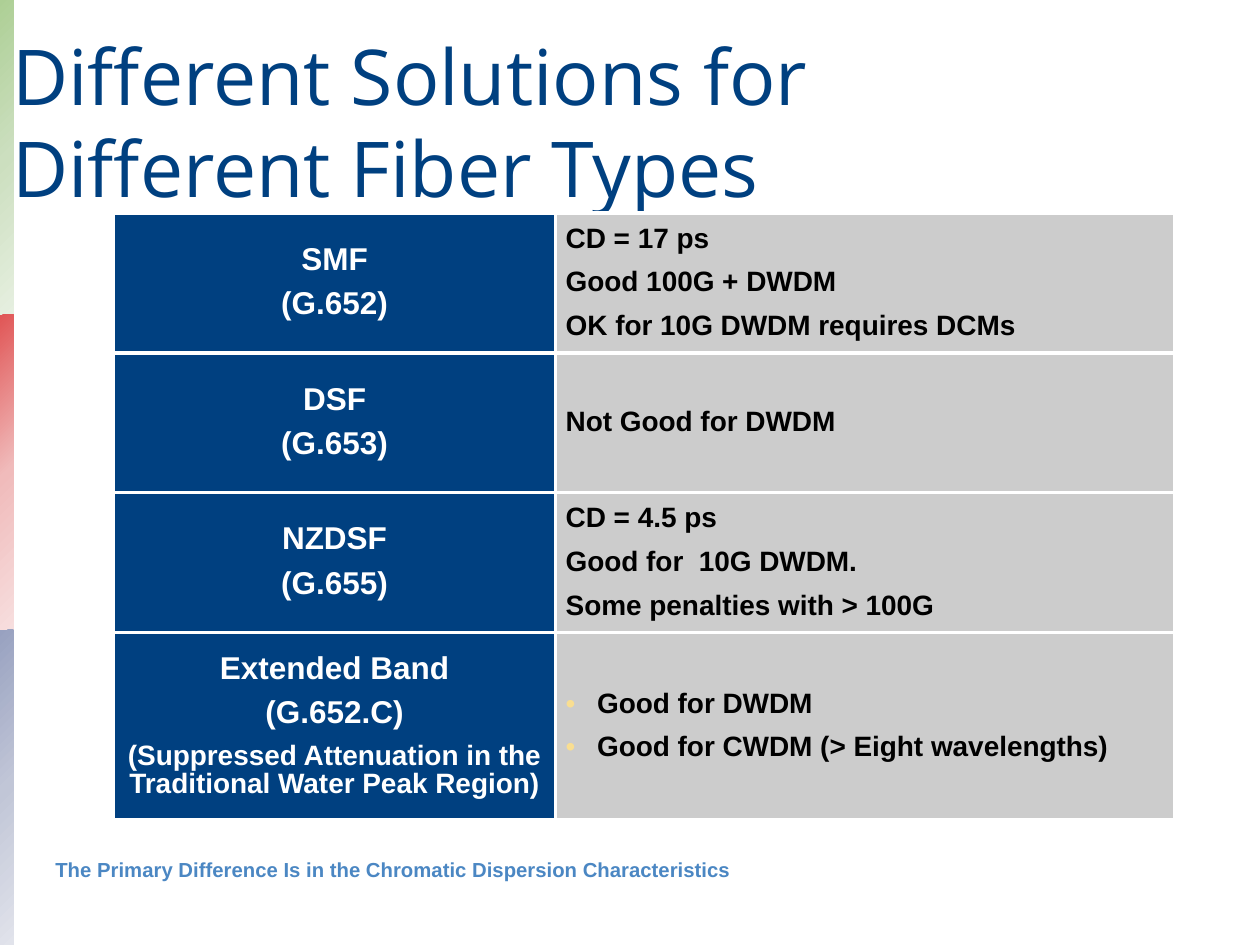
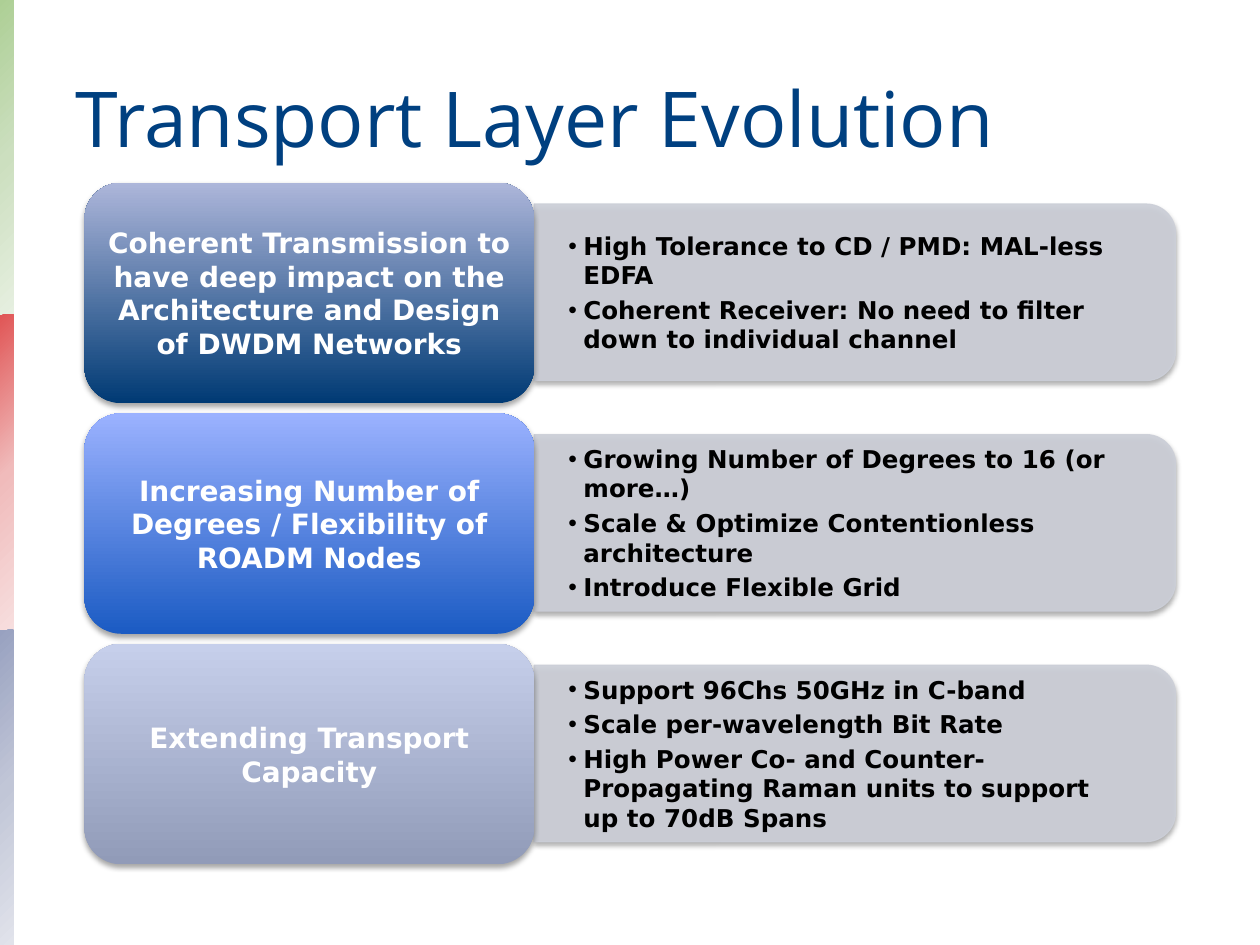
from lxml import etree
from pptx import Presentation
from pptx.dml.color import RGBColor
from pptx.enum import shapes, text
from pptx.oxml import ns
from pptx.util import Inches, Pt

NAVY, WHITE, BLACK = "004080", "FFFFFF", "000000"
CELL_GREY, PANEL_GREY = "CCCCCC", "CCCFD8"
FOOTNOTE_BLUE, BULLET_GOLD = "4B87C3", "F9DE91"
BODY_FONT, TITLE_FONT, PANEL_FONT = "Arial", "Open Sans", "DejaVu Sans"

BANDS = [
    ("ADCF95", "CCDFBF", "E6EFE0"),
    ("E05555", "F0BBBB", "F7DEDE"),
    ("98A1C0", "C1C6D7", "E1E3EB"),
]

FIBERS = [
    (["SMF", "(G.652)"],
     ["CD = 17 ps", "Good 100G + DWDM", "OK for 10G DWDM requires DCMs"]),
    (["DSF", "(G.653)"], ["Not Good for DWDM"]),
    (["NZDSF", "(G.655)"],
     ["CD = 4.5 ps", "Good for  10G DWDM.", "Some penalties with > 100G"]),
    (["Extended Band", "(G.652.C)",
      "(Suppressed Attenuation in the Traditional Water Peak Region)"],
     ["Good for DWDM", "Good for CWDM (> Eight wavelengths)"]),
]

THEMES = [
    ("Coherent Transmission to have deep impact on the Architecture and "
     "Design of DWDM Networks", ("003A74", "ADB6DA"),
     ["High Tolerance to CD / PMD: MAL-less EDFA",
      "Coherent Receiver: No need to filter down to individual channel"]),
    ("Increasing Number of Degrees / Flexibility of ROADM Nodes",
     ("1B5BC3", "9BB2FF"),
     ["Growing Number of Degrees to 16 (or more…)",
      "Scale & Optimize Contentionless architecture",
      "Introduce Flexible Grid"]),
    ("Extending Transport Capacity", ("919BB8", "C6CFEB"),
     ["Support 96Chs 50GHz in C-band",
      "Scale per-wavelength Bit Rate",
      "High Power Co- and Counter-Propagating Raman units to support "
      "up to 70dB Spans"]),
]


def rgb(color):
    return RGBColor.from_string(color)


def add_node(parent, tag, **attributes):
    node = etree.SubElement(parent, ns.qn(tag))
    for name, value in attributes.items():
        node.set(name, str(value))
    return node


def inches(*lengths):
    return [Inches(length) for length in lengths]


def set_margins(target, side, top):
    target.margin_left = target.margin_right = Inches(side)
    target.margin_top = target.margin_bottom = Inches(top)


def style(para, font, size, color, bold=True):
    for span in para.runs:
        span.font.name = font
        span.font.size = Pt(size)
        span.font.bold = bold
        span.font.color.rgb = rgb(color)


def add_bullet(para, indent, color=None):
    props = para._p.get_or_add_pPr()
    props.set("marL", str(Inches(indent)))
    props.set("indent", str(-Inches(indent)))
    if color:
        add_node(add_node(props, "a:buClr"), "a:srgbClr", val=color)
    add_node(props, "a:buFont", typeface="Arial")
    add_node(props, "a:buChar", char="•")


def fill_gradient(shape, colors, angle):
    shape.fill.background()
    blank = shape._element.spPr.find(ns.qn("a:noFill"))
    gradient = etree.Element(ns.qn("a:gradFill"), rotWithShape="1")
    stops = add_node(gradient, "a:gsLst")
    for index, color in enumerate(colors):
        stop = add_node(stops, "a:gs", pos=index * 100000 // (len(colors) - 1))
        add_node(stop, "a:srgbClr", val=color)
    add_node(gradient, "a:lin", ang=angle * 60000, scaled=0)
    blank.getparent().replace(blank, gradient)


def add_plain_shape(slide, kind, *place):
    shape = slide.shapes.add_shape(kind, *inches(*place))
    shape.shadow.inherit = False
    shape.line.fill.background()
    return shape


def add_drop_shadow(shape):
    effects = shape._element.spPr.find(ns.qn("a:effectLst"))
    shadow = add_node(effects, "a:outerShdw", blurRad=Pt(3.1), dist=Pt(1.8),
                      dir=90 * 60000, rotWithShape=0)
    add_node(add_node(shadow, "a:srgbClr", val=BLACK), "a:alpha", val=35000)


def add_text_box(slide, *place):
    box = slide.shapes.add_textbox(*inches(*place))
    box.text_frame.word_wrap = True
    box.text_frame.vertical_anchor = text.MSO_ANCHOR.MIDDLE
    return box


def add_title(slide, wording, *place):
    box = add_text_box(slide, *place)
    set_margins(box.text_frame, 0.1, 0.05)
    box.text_frame.text = wording
    style(box.text_frame.paragraphs[0], TITLE_FONT, 44, NAVY, bold=False)


def add_slide(deck):
    slide = deck.slides.add_slide(deck.slide_layouts[6])
    for index, colors in enumerate(BANDS):
        band = add_plain_shape(slide, shapes.MSO_SHAPE.RECTANGLE,
                               -0.01, index * 2.5, 0.12, 2.5)
        fill_gradient(band, colors, 45)
    return slide


def add_borders(cell):
    props = cell._tc.get_or_add_tcPr()
    for index, side in enumerate(("a:lnL", "a:lnR", "a:lnT", "a:lnB")):
        border = etree.Element(ns.qn(side), w=str(Pt(2.25)))
        add_node(add_node(border, "a:solidFill"), "a:srgbClr", val=WHITE)
        props.insert(index, border)


def fill_cell(cell, lines, color, spacing, gap):
    cell.fill.solid()
    cell.fill.fore_color.rgb = rgb(color)
    cell.vertical_anchor = text.MSO_ANCHOR.MIDDLE
    set_margins(cell, 0.08, 0.04)
    add_borders(cell)
    cell.text_frame.text = "\n".join(lines)
    paras = cell.text_frame.paragraphs
    for index, para in enumerate(paras):
        para.line_spacing = spacing
        if index:
            para.space_before = Pt(gap)
    return paras


def add_fiber_table(slide):
    frame = slide.shapes.add_table(len(FIBERS), 2,
                                   *inches(0.9, 1.69, 8.42, 4.82))
    table = frame.table
    table.first_row = table.horz_banding = False
    for column, width in zip(table.columns, (3.51, 4.91)):
        column.width = Inches(width)
    for row, height in zip(table.rows, (1.11, 1.11, 1.11, 1.49)):
        row.height = Inches(height)
    for index, (names, verdicts) in enumerate(FIBERS):
        name_paras = fill_cell(table.cell(index, 0), names, NAVY, 0.9, 7.2)
        for line, para in enumerate(name_paras):
            para.alignment = text.PP_ALIGN.CENTER
            style(para, BODY_FONT, 18 if line < 2 else 16, WHITE)
        verdict_paras = fill_cell(table.cell(index, 1), verdicts,
                                  CELL_GREY, 0.95, 8)
        for para in verdict_paras:
            if index == len(FIBERS) - 1:
                add_bullet(para, 0.25, BULLET_GOLD)
            style(para, BODY_FONT, 16, BLACK)


def add_footnote(slide, wording):
    box = add_text_box(slide, 0.36, 6.58, 9.36, 0.41)
    set_margins(box.text_frame, 0.08, 0.04)
    box.text_frame.vertical_anchor = text.MSO_ANCHOR.TOP
    box.text_frame.text = wording
    para = box.text_frame.paragraphs[0]
    style(para, BODY_FONT, 20, FOOTNOTE_BLUE)
    para.runs[0].font._element.set("baseline", "-25000")


def add_panel(slide, top, points):
    width, height = 5.09, 1.4
    panel = add_plain_shape(slide, shapes.MSO_SHAPE.ROUND_2_SAME_RECTANGLE,
                            4.24 + (width - height) / 2,
                            top + (height - width) / 2, height, width)
    panel.rotation = 90
    for paint in (panel.fill, panel.line.fill):
        paint.solid()
        paint.fore_color.rgb = rgb(PANEL_GREY)
    panel.line.width = Pt(0.75)
    for color in panel._element.spPr.iter(ns.qn("a:srgbClr")):
        add_node(color, "a:alpha", val=90000)
    add_drop_shadow(panel)

    box = add_text_box(slide, 4.24, top + 0.07, 5.02, 1.26)
    set_margins(box.text_frame, 0.27, 0.14)
    box.text_frame.text = "\n".join(points)
    for para in box.text_frame.paragraphs:
        para.space_after = Pt(3)
        add_bullet(para, 0.12)
        style(para, PANEL_FONT, 14, BLACK)


def add_theme(slide, top, heading, colors):
    card = add_plain_shape(slide, shapes.MSO_SHAPE.ROUNDED_RECTANGLE,
                           0.67, top, 3.57, 1.75)
    fill_gradient(card, colors, 270)
    add_drop_shadow(card)
    frame = card.text_frame
    frame.word_wrap = True
    frame.vertical_anchor = text.MSO_ANCHOR.MIDDLE
    set_margins(frame, 0.07, 0.03)
    frame.text = heading
    para = frame.paragraphs[0]
    para.alignment = text.PP_ALIGN.CENTER
    style(para, PANEL_FONT, 16, WHITE)


def build_fiber_slide(deck):
    slide = add_slide(deck)
    add_footnote(slide, "The Primary Difference Is in the Chromatic "
                        "Dispersion Characteristics")
    add_title(slide, "Different Solutions for Different Fiber Types",
              0, 0.67, 8.91, 0.58)
    add_fiber_table(slide)


def build_evolution_slide(deck):
    slide = add_slide(deck)
    add_title(slide, "Transport Layer Evolution", 0.5, 0.3, 9, 1.25)
    for index, (heading, colors, points) in enumerate(THEMES):
        top = 1.45 + index * 1.83
        add_panel(slide, top + 0.17, points)
        add_theme(slide, top, heading, colors)


def main():
    deck = Presentation()
    deck.slide_width, deck.slide_height = inches(10, 7.5)
    build_fiber_slide(deck)
    build_evolution_slide(deck)
    deck.save("out.pptx")


if __name__ == "__main__":
    main()
